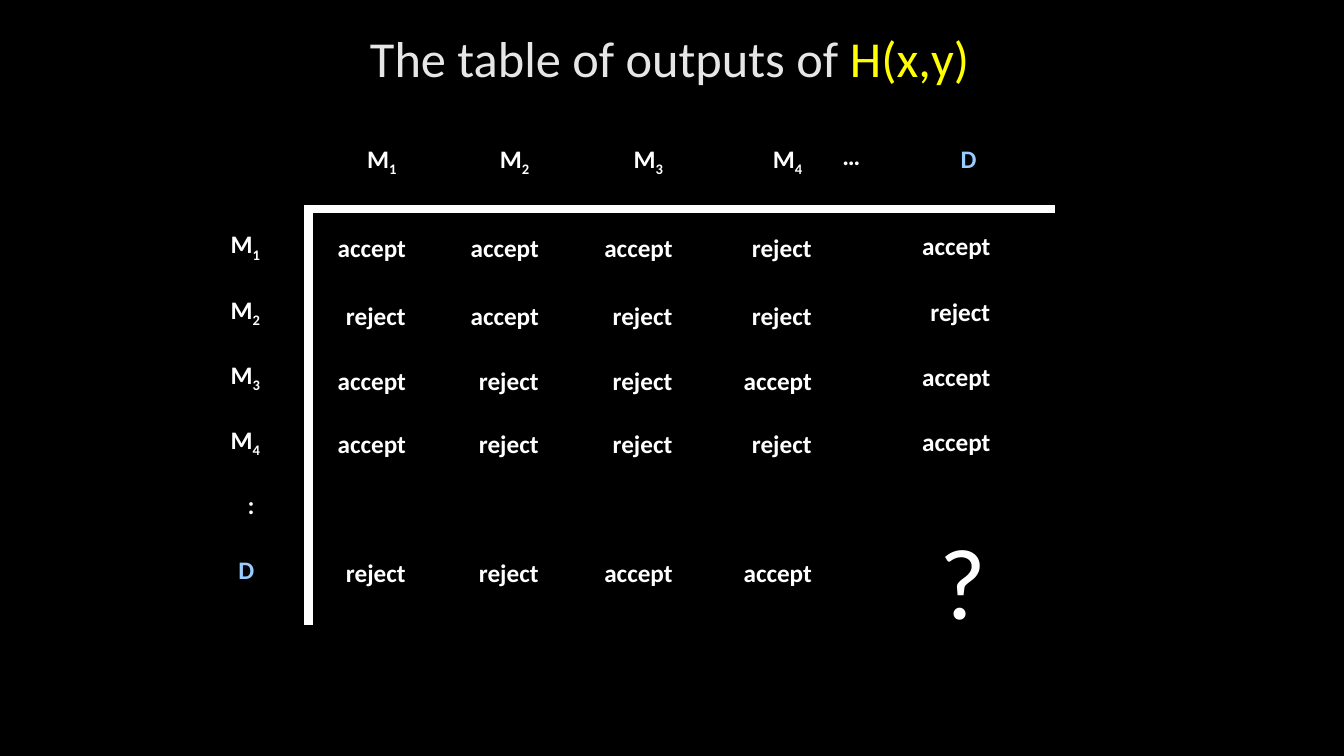
from pptx import Presentation
from pptx import util as u
from pptx.dml.color import RGBColor
from pptx.enum import shapes, text
from pptx.oxml.ns import qn
from lxml import etree

WHITE, BLUE, YELLOW, GREY = "FFFFFF", "99CCFF", "FFFF00", "E7E6E6"
LINE_H = 1.22
ROW_PITCH = 1.64
COLUMN_LEFTS = [2.7, 6.05, 9.42, 12.93, 17.43]
ROW_TOPS = [2.24, 3.96, 5.59, 7.19, 10.44]
WORD_BOXES = {"accept": (0, 2.84), "reject": (0.21, 2.59)}
OUTPUTS = [
    ["accept", "accept", "accept", "reject", "accept"],
    ["reject", "accept", "reject", "reject", "reject"],
    ["accept", "reject", "reject", "accept", "accept"],
    ["accept", "reject", "reject", "reject", "accept"],
    ["reject", "reject", "accept", "accept"],
]


def rgb(value):
    return RGBColor.from_string(value)


def add_run(p, words, size=18, color=WHITE, bold=True, subscript=False):
    r = p.add_run()
    r.text = words
    r.font.name = "Calibri"
    r.font.size = u.Pt(size)
    r.font.bold = bold
    r.font.color.rgb = rgb(color)
    if subscript:
        r.font._element.set("baseline", "-25000")


def add_label(group, words, left, top, width, height=LINE_H, index="", **style):
    sp = group.shapes.add_textbox(u.Cm(left), u.Cm(top), u.Cm(width), u.Cm(height))
    tf = sp.text_frame
    tf.word_wrap = True
    p = tf.paragraphs[0]
    add_run(p, words, **style)
    if index:
        add_run(p, index, subscript=True, **style)


def add_axis(group, x1, y1, x2, y2):
    line = group.shapes.add_connector(
        shapes.MSO_CONNECTOR.STRAIGHT, u.Cm(x1), u.Cm(y1), u.Cm(x2), u.Cm(y2))
    line.line.color.rgb = rgb(WHITE)
    line.line.width = u.Pt(6)
    etree.SubElement(line._element.spPr, qn("a:effectLst"))


def add_title(s, left, top, width, height):
    sp = s.shapes.title
    sp.left, sp.top, sp.width, sp.height = map(u.Cm, (left, top, width, height))
    tf = sp.text_frame
    tf.word_wrap = True
    tf.auto_size = text.MSO_AUTO_SIZE.NONE
    tf.vertical_anchor = text.MSO_ANCHOR.TOP
    p = tf.paragraphs[0]
    p.alignment = text.PP_ALIGN.LEFT
    add_run(p, "The table of outputs of ", size=36, color=GREY, bold=False)
    add_run(p, "H(x,y)", size=36, color=YELLOW, bold=False)


def add_column_headers(group, left, top):
    for i, col in enumerate(COLUMN_LEFTS[:4], start=1):
        add_label(group, "M", left + col + 0.74, top, 1.6, index=str(i))
    add_label(group, "…", left + 15.42, top - 0.08, 1.37)
    add_label(group, "D", left + COLUMN_LEFTS[4] + 0.97, top, 1.14, color=BLUE)


def add_row_headers(group, left, top):
    for i in range(4):
        add_label(group, "M", left, top + i * ROW_PITCH, 1.6, index=str(i + 1))
    add_label(group, ":", left + 0.43, top + 4 * ROW_PITCH, 0.79)
    add_label(group, "D", left + 0.2, top + 5 * ROW_PITCH, 1.14, color=BLUE)


def add_outputs(group, left, top):
    for i, row in enumerate(OUTPUTS):
        for j, word in enumerate(row):
            shift, width = WORD_BOXES[word]
            y = 2.21 + i * ROW_PITCH if j == 4 else ROW_TOPS[i]
            add_label(group, word, left + COLUMN_LEFTS[j] + shift, top + y, width)
    add_label(group, "?", left + 17.86, top + 9.47, 1.65, 3.18, size=72, bold=False)


def add_output_grid(s, left, top, width, height):
    group = s.shapes.add_group_shape()
    add_axis(group, left + 2.21, top + 1.68, left + 2.21, top + height)
    add_axis(group, left + 2.14, top + 1.78, left + width, top + 1.78)
    add_row_headers(group, left, top + 2.16)
    add_column_headers(group, left, top)
    add_outputs(group, left, top)


def main():
    prs = Presentation()
    prs.slide_width, prs.slide_height = u.Cm(33.87), u.Cm(19.05)
    s = prs.slides.add_slide(prs.slide_layouts[5])
    s.background.fill.solid()
    s.background.fill.fore_color.rgb = rgb("000000")
    add_title(s, 9.07, 0.56, 16.13, 1.73)
    add_output_grid(s, 5.56, 3.48, 21.03, 12.27)
    prs.save("out.pptx")


if __name__ == "__main__":
    main()
